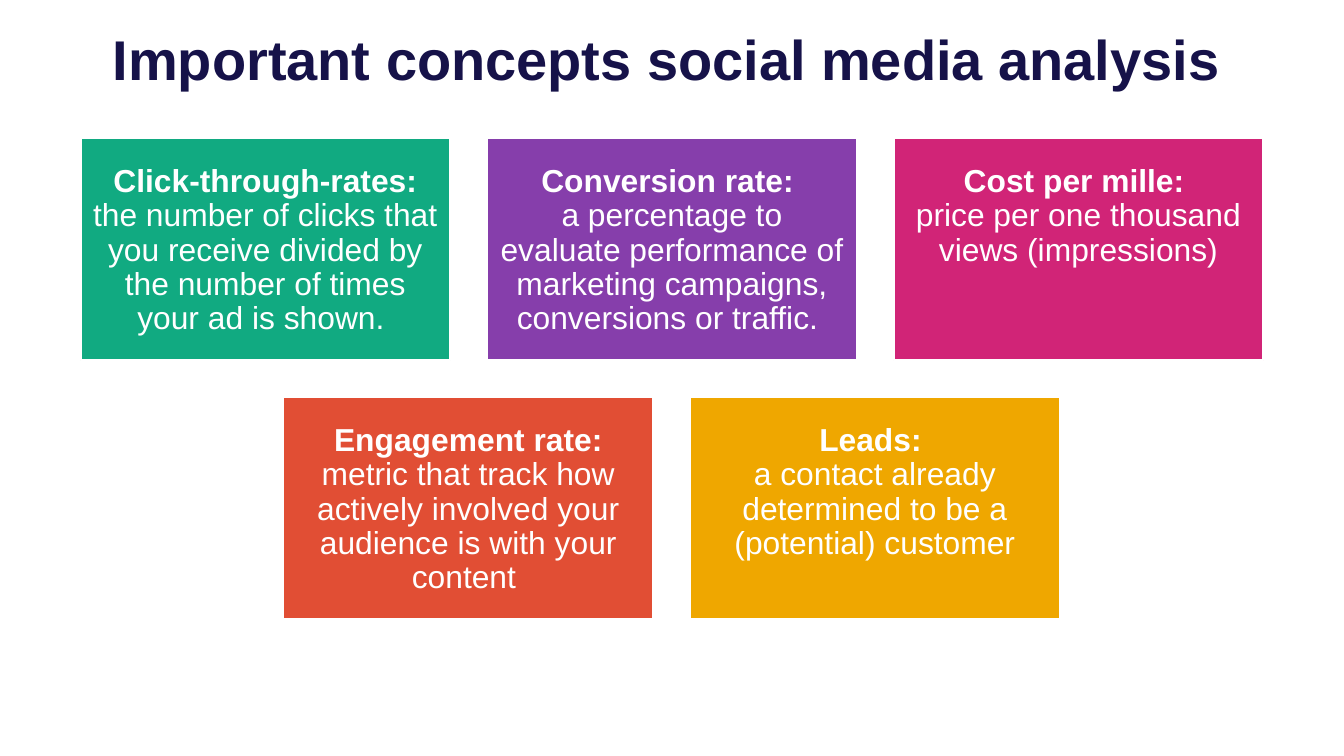
from typing import NamedTuple

from pptx import Presentation
from pptx.dml.color import RGBColor
from pptx.enum import shapes, text
from pptx.util import Pt

PX = 4572  # EMU per px, 200 px to the inch
SLIDE_WIDTH, SLIDE_HEIGHT = 2000, 1125
CARD_WIDTH, CARD_HEIGHT = 550, 330
GAP = 55
FIRST_ROW_TOP = 206

NAVY = RGBColor(0x16, 0x12, 0x49)
WHITE = RGBColor(0xFF, 0xFF, 0xFF)
GREEN = RGBColor(0x11, 0xAA, 0x81)
PURPLE = RGBColor(0x86, 0x3E, 0xAB)
PINK = RGBColor(0xD1, 0x24, 0x77)
RED = RGBColor(0xE1, 0x4E, 0x34)
YELLOW = RGBColor(0xEF, 0xA7, 0x00)


class Concept(NamedTuple):
    term: str
    definition: str
    fill: RGBColor
    line_break: bool = True


ROWS = [
    [
        Concept("Click-through-rates:",
                " the number of clicks that you receive divided by "
                "the number of times your ad is shown. ", GREEN, False),
        Concept("Conversion rate: ",
                "a percentage to evaluate performance of marketing campaigns, "
                "conversions or traffic. ", PURPLE),
        Concept("Cost per mille: ",
                "price per one thousand views (impressions)", PINK),
    ],
    [
        Concept("Engagement rate:",
                " metric that track how actively involved your audience "
                "is with your content ", RED, False),
        Concept("Leads: ",
                "a contact already determined to be a (potential) customer",
                YELLOW),
    ],
]


def format_frame(frame, anchor, left: int, top: int, right: int, bottom: int) -> None:
    settings = {
        "word_wrap": True, "vertical_anchor": anchor,
        "margin_left": left * PX, "margin_top": top * PX,
        "margin_right": right * PX, "margin_bottom": bottom * PX,
    }
    for name, value in settings.items():
        setattr(frame, name, value)


def add_run(paragraph, words: str, size: int, color: RGBColor, bold: bool) -> None:
    run = paragraph.add_run()
    run.text = words
    settings = {"name": "Arial", "size": Pt(size), "bold": bold}
    for name, value in settings.items():
        setattr(run.font, name, value)
    run.font.color.rgb = color


def add_title(slide, words: str) -> None:
    box = slide.shapes.add_textbox(148 * PX, 24 * PX, 1704 * PX, 126 * PX)
    format_frame(box.text_frame, text.MSO_ANCHOR.MIDDLE, 20, 20, 20, 20)
    paragraph = box.text_frame.paragraphs[0]
    paragraph.alignment = text.PP_ALIGN.LEFT
    add_run(paragraph, words, 30, NAVY, True)


def add_card(slide, concept: Concept, left: int, top: int) -> None:
    shape = slide.shapes.add_shape(
        shapes.MSO_SHAPE.RECTANGLE,
        left * PX, top * PX, CARD_WIDTH * PX, CARD_HEIGHT * PX)
    shape.shadow.inherit = False
    shape.fill.solid()
    shape.fill.fore_color.rgb = concept.fill
    shape.line.color.rgb = WHITE
    shape.line.width = Pt(1)

    format_frame(shape.text_frame, text.MSO_ANCHOR.TOP, 16, 40, 16, 16)
    paragraph = shape.text_frame.paragraphs[0]
    paragraph.alignment = text.PP_ALIGN.CENTER
    paragraph.line_spacing = 0.9
    add_run(paragraph, concept.term, 17, WHITE, True)
    if concept.line_break:
        paragraph.add_line_break()
    add_run(paragraph, concept.definition, 17, WHITE, False)


def main() -> None:
    presentation = Presentation()
    presentation.slide_width = SLIDE_WIDTH * PX
    presentation.slide_height = SLIDE_HEIGHT * PX
    slide = presentation.slides.add_slide(presentation.slide_layouts[6])

    add_title(slide, "Important concepts social media analysis")

    # Rows of cards, each centred on the slide
    for row_index, row in enumerate(ROWS):
        row_width = len(row) * (CARD_WIDTH + GAP) - GAP
        row_left = (SLIDE_WIDTH - row_width) // 2
        top = FIRST_ROW_TOP + row_index * (CARD_HEIGHT + GAP)
        for column, concept in enumerate(row):
            add_card(slide, concept, row_left + column * (CARD_WIDTH + GAP), top)

    presentation.save("out.pptx")


if __name__ == "__main__":
    main()
